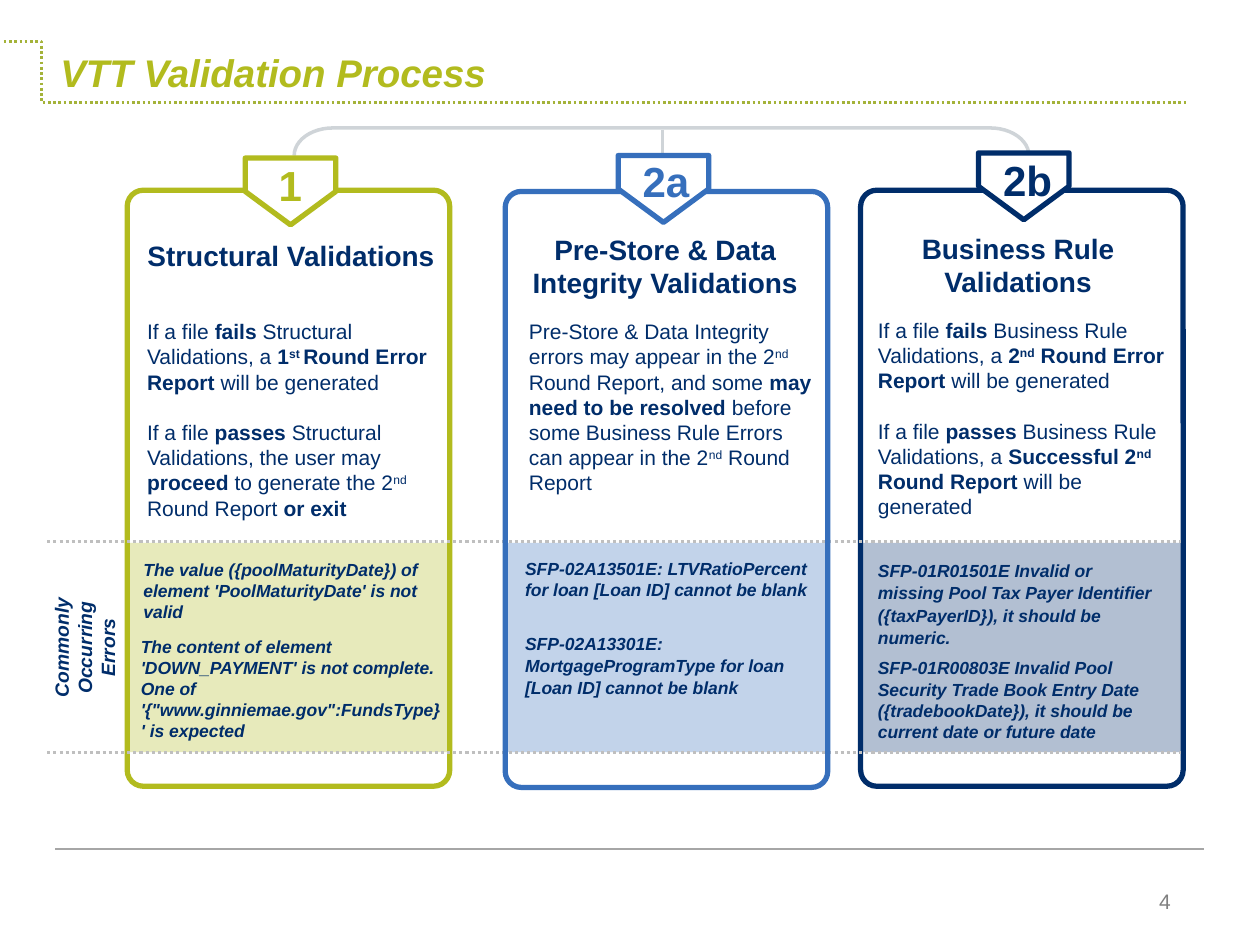
from lxml import etree
from pptx import Presentation
from pptx.dml.color import RGBColor
from pptx.enum.dml import MSO_LINE
from pptx.enum.shapes import MSO_CONNECTOR, MSO_SHAPE
from pptx.enum.text import MSO_ANCHOR, PP_ALIGN
from pptx.oxml.ns import qn
from pptx.util import Pt

STRAIGHT, ELBOW = MSO_CONNECTOR.STRAIGHT, MSO_CONNECTOR.ELBOW
RECTANGLE, ROUNDED = MSO_SHAPE.RECTANGLE, MSO_SHAPE.ROUNDED_RECTANGLE
PENTAGON, BRACKET = MSO_SHAPE.PENTAGON, MSO_SHAPE.LEFT_BRACKET
TOP, MIDDLE = MSO_ANCHOR.TOP, MSO_ANCHOR.MIDDLE
LEFT, CENTER, RIGHT = PP_ALIGN.LEFT, PP_ALIGN.CENTER, PP_ALIGN.RIGHT
DOTTED = MSO_LINE.ROUND_DOT

COLORS = {
    "navy": "002D6A", "blue": "366FBC", "lime": "B2BB1E", "olive": "A4B339",
    "bracket": "CFD4D8", "divider": "BFBFBF", "footer": "A6A6A6",
    "number": "808080", "white": "FFFFFF",
}
CARD_SIZE = (184.3, 340.6)
ERROR_TOP, ERROR_BOTTOM = 309.6, 429.8
ERROR_FONT = {"size": Pt(10), "bold": True, "italic": True}

COLUMNS = [
    {
        "color": "lime", "origin": (72.7, 108.7),
        "badge": ("1", 74.2, -25.2, 84.3, -19.4),
        "heading": ("Structural Validations", -30.2, 27.4, 247.7, 19.4),
        "body_box": (4.3, 69.9, 180, 138.2),
        "body": [
            [("If a file ", ""), ("fails", "b"), (" Structural Validations, a ", ""),
             ("1", "b"), ("st ", "bs"), ("Round Error Report", "b"),
             (" will be generated", "")],
            [("If a file", ""), (" passes ", "b"),
             ("Structural Validations, the user may ", ""), ("proceed", "b"),
             (" to generate the 2", ""), ("nd", "s"), (" Round Report ", ""),
             ("or exit", "b")],
        ],
        "errors": [
            ("The value ({poolMaturityDate}) of element 'PoolMaturityDate' is not valid",
             (2.2, 207.4, 184.3, 55.4), 1),
            ("The content of element 'DOWN_PAYMENT' is not complete. One of "
             "'{\"www.ginniemae.gov\":FundsType}' is expected",
             (0.7, 251.3, 186.5, 67.7), 1),
        ],
    },
    {
        "color": "navy", "origin": (491.8, 108.7),
        "badge": ("2b", 74.1, -28.1, 79.2, -22.3),
        "heading": ("Business Rule Validations", 5, 23.1, 169.9, 38.9),
        "body_box": (2.8, 69.1, 181.4, 138.2),
        "body": [
            [("If a file", ""), (" fails ", "b"), ("Business Rule Validations, a ", ""),
             ("2", "b"), ("nd", "bs"), (" Round Error Report", "b"),
             (" will be generated", "")],
            [("If a file ", ""), ("passes", "b"), (" Business Rule Validations, a ", ""),
             ("Successful 2", "b"), ("nd", "bs"), (" Round Report ", "b"),
             ("will be generated", "")],
        ],
        "errors": [
            ("SFP-01R01501E Invalid or missing Pool Tax Payer Identifier "
             "({taxPayerID}), it should be numeric.", (2.8, 206.7, 172.1, 58.3), 1.07),
            ("SFP-01R00803E Invalid Pool Security Trade Book Entry Date "
             "({tradebookDate}), it should be current date or future date",
             (2.8, 263.5, 180, 55.4), 1),
        ],
    },
    {
        "color": "blue", "origin": (288.7, 109.4),
        "badge": ("2a", 71.3, -27.3, 76.3, -22.8),
        "heading": ("Pre-Store & Data Integrity Validations", 6.5, 23.1, 169.9, 38.9),
        "body_box": (6.5, 69.2, 177.8, 108.7),
        "body": [
            [("Pre-Store & Data Integrity errors may appear in the 2", ""), ("nd", "s"),
             (" Round Report, and some ", ""), ("may need to be resolved ", "b"),
             ("before some Business Rule Errors can appear in the 2", ""), ("nd", "s"),
             (" Round Report", "")],
        ],
        "errors": [
            ("SFP-02A13501E: LTVRatioPercent for loan [Loan ID] cannot be blank",
             (4.3, 206, 181.4, 31.7), 1),
            ("SFP-02A13301E: MortgageProgramType for loan [Loan ID] cannot be blank",
             (4.3, 247.7, 171.4, 45.4), 1.07),
        ],
    },
]


def rgb(name):
    """Return the named colour."""
    return RGBColor.from_string(COLORS[name])


def add_shape(slide, kind, box, fill=None, line=None, width=3, rotation=0, adjust=None):
    """Place a preset shape with the given fill and outline."""
    shape = slide.shapes.add_shape(kind, *map(Pt, box))
    shape.shadow.inherit = False
    shape.rotation = rotation
    if adjust is not None:
        shape.adjustments[0] = adjust
    if fill:
        shape.fill.solid()
        shape.fill.fore_color.rgb = rgb(fill)
    else:
        shape.fill.background()
    if line:
        shape.line.color.rgb = rgb(line)
        shape.line.width = Pt(width)
    else:
        shape.line.fill.background()
    return shape


def add_line(slide, ends, color, width, dash=None, kind=STRAIGHT):
    """Place a connector between two points."""
    connector = slide.shapes.add_connector(kind, *map(Pt, ends))
    connector.line.color.rgb = rgb(color)
    connector.line.width = Pt(width)
    if dash:
        connector.line.dash_style = dash
    etree.SubElement(connector.element.spPr, qn("a:effectLst"))
    return connector


def add_text(slide, box, paragraphs, font, color="navy", align=LEFT, anchor=TOP,
             margins=(7.2, 3.6), spacing=1, rotation=0):
    """Place a text box of paragraphs made of (text, marks) runs."""
    shape = slide.shapes.add_textbox(*map(Pt, box))
    shape.rotation = rotation
    frame = shape.text_frame
    horizontal, vertical = map(Pt, margins)
    formats = {"word_wrap": True, "vertical_anchor": anchor,
               "margin_left": horizontal, "margin_right": horizontal,
               "margin_top": vertical, "margin_bottom": vertical}
    for name, value in formats.items():
        setattr(frame, name, value)
    for index, runs in enumerate(paragraphs):
        paragraph = frame.add_paragraph() if index else frame.paragraphs[0]
        paragraph.alignment = align
        paragraph.line_spacing = spacing
        if index:
            paragraph.space_before = Pt(14.4)
        for text, marks in runs:
            run = paragraph.add_run()
            run.text = text
            for name, value in {"name": "Arial", "bold": "b" in marks, **font}.items():
                setattr(run.font, name, value)
            run.font.color.rgb = rgb(color)
            if "s" in marks:
                run._r.get_or_add_rPr().set("baseline", "30000")


def add_frame(slide):
    """Draw the title, its dotted rule, the footer line and the page number."""
    add_line(slide, (31.7, 485.3, 688.3, 485.3), "footer", 1)
    rule = add_line(slide, (2.2, 23.8, 678.2, 58.7), "olive", 1.5, DOTTED, ELBOW)
    guides = rule.element.spPr.find(qn("a:prstGeom")).find(qn("a:avLst"))
    etree.SubElement(guides, qn("a:gd"), name="adj1", fmla="val 3200")
    add_text(slide, (27.4, 28.1, 620.6, 25.9), [[("VTT Validation Process", "b")]],
             {"size": Pt(22), "italic": True}, "lime", anchor=MIDDLE)
    add_text(slide, (514.1, 500.4, 162, 28.8), [[("4", "")]], {"size": Pt(12)},
             "number", RIGHT, MIDDLE)


def add_bracket(slide):
    """Draw the bracket that joins the three badges."""
    add_line(slide, (378.7, 74.2, 378.7, 89.3), "bracket", 2)
    add_shape(slide, BRACKET, (370.1, -128.9, 15.8, 419.8), line="bracket", width=2,
              rotation=90, adjust=1.4)


def add_band(slide, column):
    """Tint the error area of a column."""
    box = (column["origin"][0] + 0.7, ERROR_TOP + 0.7, 182.9, 119.5)
    band = add_shape(slide, RECTANGLE, box, fill=column["color"])
    color = band.element.spPr.find(qn("a:solidFill"))[0]
    etree.SubElement(color, qn("a:alpha"), val="30000")


def add_column(slide, column):
    """Draw a card with its badge, heading, body and errors."""
    left, top = column["origin"]
    color = column["color"]

    def inside(x, y, width, height):
        """Shift a box from the card's corner to the slide."""
        return left + x, top + y, width, height

    add_shape(slide, ROUNDED, inside(0, 0, *CARD_SIZE), line=color, adjust=0.05)
    label, badge_x, badge_y, text_x, text_y = column["badge"]
    add_shape(slide, PENTAGON, inside(badge_x, badge_y, 38.2, 51.8), "white", color,
              rotation=90)
    add_text(slide, inside(text_x, text_y, 51.8, 32.8), [[(label, "b")]],
             {"size": Pt(24)}, color, anchor=MIDDLE, margins=(2.2, 2.2))
    heading, *heading_box = column["heading"]
    add_text(slide, inside(*heading_box), [[(heading, "b")]], {"size": Pt(16)},
             align=CENTER, anchor=MIDDLE, margins=(0, 0))
    add_text(slide, inside(*column["body_box"]), column["body"], {"size": Pt(12)})
    for text, box, spacing in column["errors"]:
        add_text(slide, inside(*box), [[(text, "b")]], ERROR_FONT, spacing=spacing)


def add_error_row(slide):
    """Draw the dotted dividers and the label of the error row."""
    for y in (ERROR_TOP, ERROR_BOTTOM):
        add_line(slide, (27, y, 675, y), "divider", 1.75, DOTTED)
    add_text(slide, (-0.7, 346.3, 98.6, 47.5), [[("Commonly Occurring Errors", "b")]],
             {"size": Pt(11), "italic": True}, align=CENTER, rotation=270)


def main():
    """Build and save the slide."""
    presentation = Presentation()
    presentation.slide_width, presentation.slide_height = Pt(720), Pt(540)
    slide = presentation.slides.add_slide(presentation.slide_layouts[6])
    add_frame(slide)
    for column in COLUMNS:
        add_band(slide, column)
    add_bracket(slide)
    *outer, middle = COLUMNS
    for column in outer:
        add_column(slide, column)
    add_error_row(slide)
    add_column(slide, middle)
    presentation.save("out.pptx")


if __name__ == "__main__":
    main()
